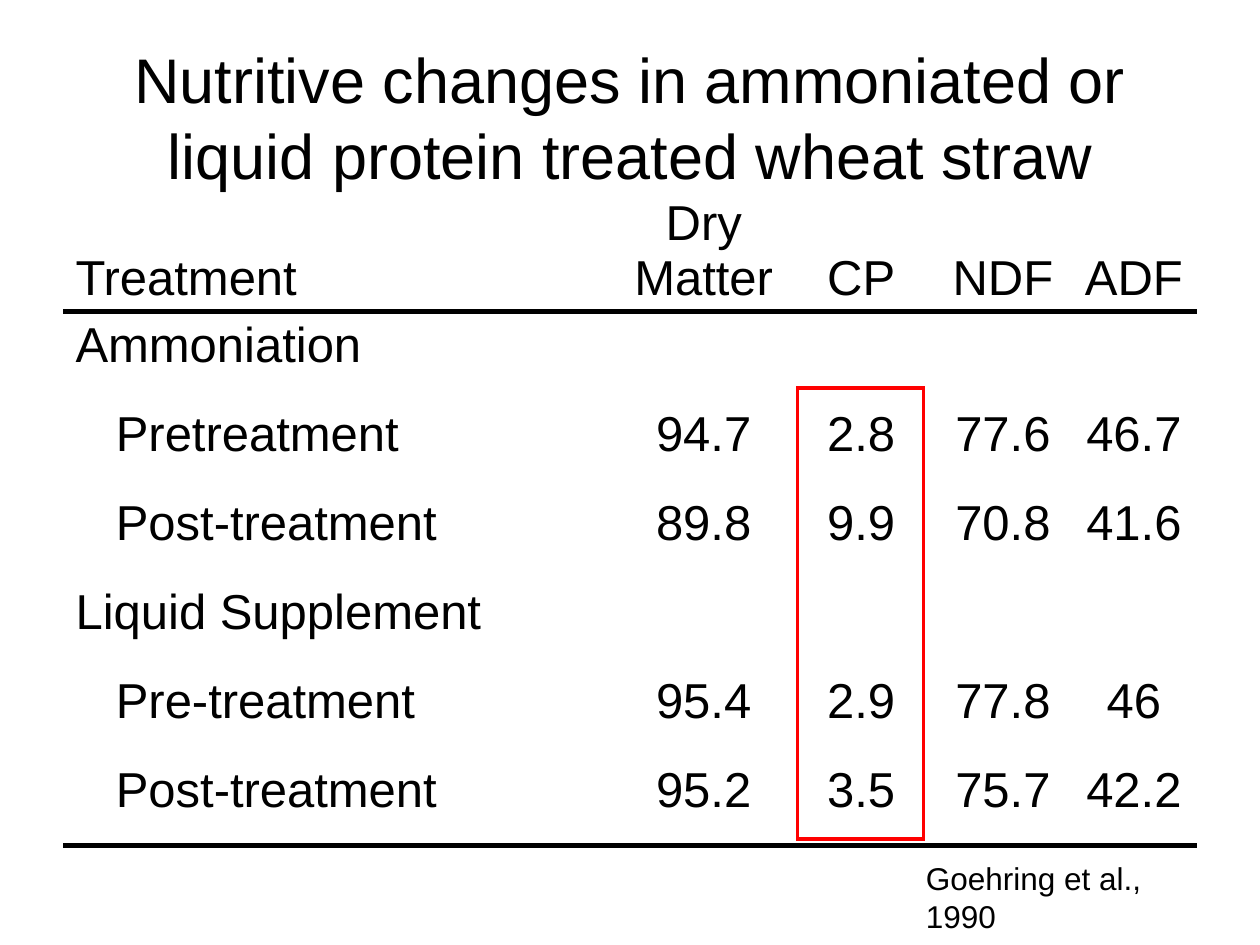
from lxml import etree
from pptx import Presentation
from pptx import util as u
from pptx.dml.color import RGBColor
from pptx.enum import shapes, text
from pptx.oxml.ns import qn

TITLE = "Nutritive changes in ammoniated or liquid protein treated wheat straw"
CITATION = "Goehring et al., 1990"
HEADER = ("Treatment", "Dry Matter", "CP", "NDF", "ADF")
GROUPS = {
    "Ammoniation": [
        ("Pretreatment", "94.7", "2.8", "77.6", "46.7"),
        ("Post-treatment", "89.8", "9.9", "70.8", "41.6"),
    ],
    "Liquid Supplement": [
        ("Pre-treatment", "95.4", "2.9", "77.8", "46"),
        ("Post-treatment", "95.2", "3.5", "75.7", "42.2"),
    ],
}

BLACK = RGBColor(0, 0, 0)
RED = RGBColor(255, 0, 0)
FONT = "Arial"
NO_STYLE = "{2D5ABB26-0587-4C30-8999-92F81FD0307C}"

SLIDE_W, SLIDE_H = 10, 7.5
MARGIN = 0.05 * SLIDE_W
TABLE_W = SLIDE_W - 2 * MARGIN
TABLE_TOP, TABLE_BOTTOM = 1.44, 6.71
HEADER_H = 1.03
COLUMNS = (4.42, 1.33, 1.17, 1.08, 1)
CELL_MARGIN, INDENT = 0.1, 0.32


def write(frame, words, size, align=text.PP_ALIGN.LEFT):
    frame.text = words
    paragraph = frame.paragraphs[0]
    paragraph.alignment = align
    # On an empty cell the paragraph font still sets the line height.
    for font in [paragraph.font] + [run.font for run in paragraph.runs]:
        font.name, font.size = FONT, u.Pt(size)
        font.color.rgb = BLACK


def add_words(slide, words, box, size, align=text.PP_ALIGN.LEFT):
    frame = slide.shapes.add_textbox(*map(u.Inches, box)).text_frame
    frame.word_wrap = True
    frame.vertical_anchor = text.MSO_ANCHOR.MIDDLE
    write(frame, words, size, align)
    return frame


def rule_below(cell):
    line = etree.Element(qn("a:lnB"), w=str(u.Pt(3)))
    fill = etree.SubElement(line, qn("a:solidFill"))
    etree.SubElement(fill, qn("a:srgbClr"), val=str(BLACK))
    cell._tc.get_or_add_tcPr().insert(0, line)


def add_results(slide):
    rows = [(HEADER, False)]
    for group, treatments in GROUPS.items():
        rows.append(((group,) + ("",) * (len(HEADER) - 1), False))
        rows += [(treatment, True) for treatment in treatments]
    body_h = (TABLE_BOTTOM - TABLE_TOP - HEADER_H) / (len(rows) - 1)

    frame = slide.shapes.add_table(
        len(rows), len(HEADER), u.Inches(MARGIN), u.Inches(TABLE_TOP),
        u.Inches(TABLE_W), u.Inches(TABLE_BOTTOM - TABLE_TOP))
    table = frame.table
    table.first_row = table.horz_banding = False
    table._tbl.tblPr.find(qn("a:tableStyleId")).text = NO_STYLE
    for column, width in zip(table.columns, COLUMNS):
        column.width = u.Inches(width)

    for r, (values, indented) in enumerate(rows):
        table.rows[r].height = u.Inches(body_h if r else HEADER_H)
        for c, value in enumerate(values):
            cell = table.cell(r, c)
            cell.fill.background()
            cell.vertical_anchor = text.MSO_ANCHOR.TOP if r else text.MSO_ANCHOR.BOTTOM
            write(cell.text_frame, value, 28,
                  text.PP_ALIGN.CENTER if c else text.PP_ALIGN.LEFT)
            if indented and c == 0:
                cell.margin_left = u.Inches(CELL_MARGIN + INDENT)
            if r in (0, len(rows) - 1):
                rule_below(cell)


def add_highlight(slide, box):
    highlight = slide.shapes.add_shape(
        shapes.MSO_SHAPE.RECTANGLE, *map(u.Inches, box))
    highlight.shadow.inherit = False
    highlight.fill.background()
    highlight.line.color.rgb = RED
    highlight.line.width = u.Pt(2.25)
    outline = highlight.line._get_or_add_ln()
    etree.SubElement(outline, qn("a:miter"), lim="800000")


def main():
    deck = Presentation()
    deck.slide_width, deck.slide_height = u.Inches(SLIDE_W), u.Inches(SLIDE_H)
    slide = deck.slides.add_slide(deck.slide_layouts[6])
    add_words(slide, TITLE, (MARGIN, 0.3, TABLE_W, 1.25), 36, text.PP_ALIGN.CENTER)
    add_results(slide)
    citation = add_words(slide, CITATION, (7.25, 6.92, 2.53, 0.4), 18)
    citation.word_wrap = False
    citation.auto_size = text.MSO_AUTO_SIZE.SHAPE_TO_FIT_TEXT
    add_highlight(slide, (6.33, 3.08, 1, 3.58))
    deck.save("out.pptx")


if __name__ == "__main__":
    main()
